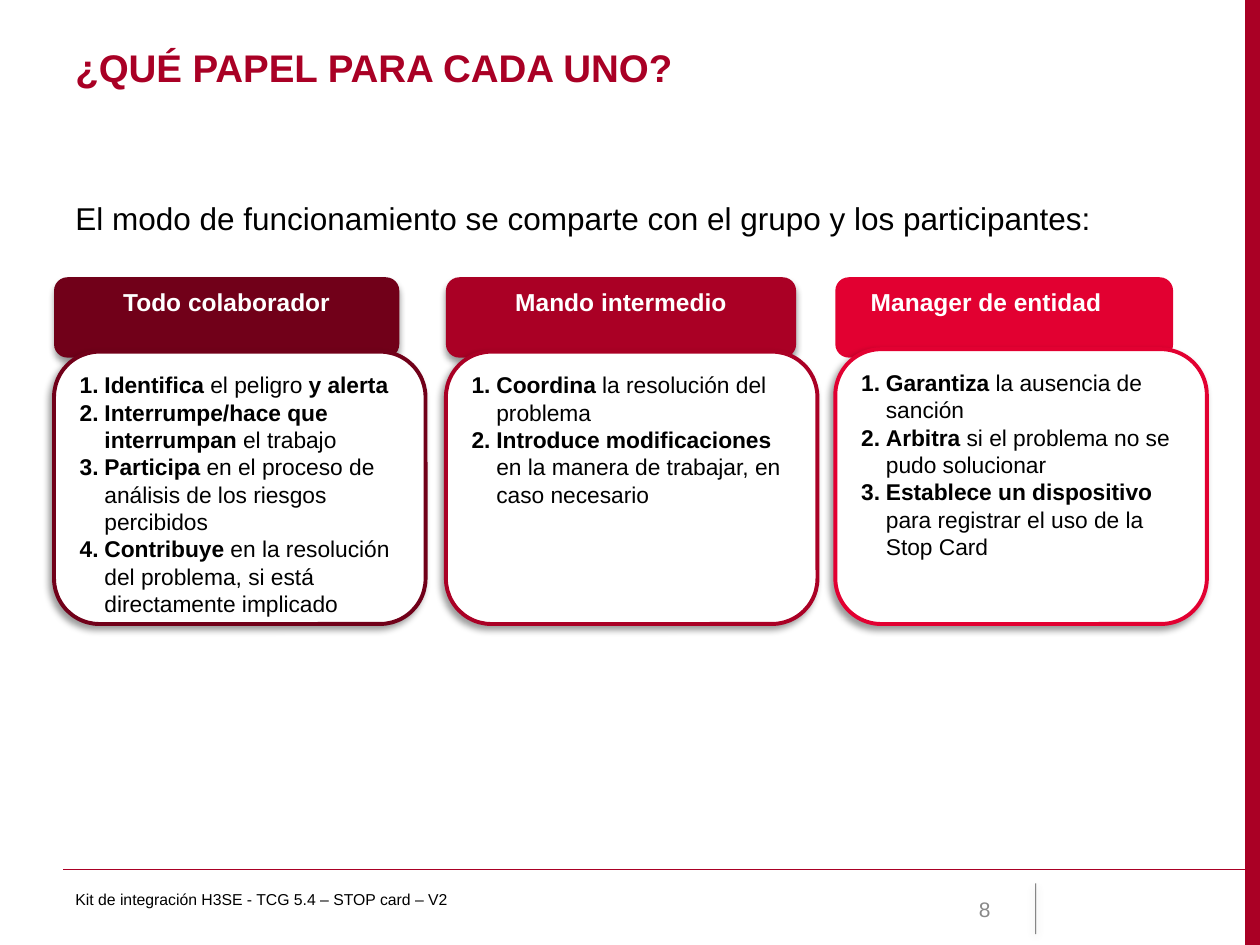
from lxml import etree
from pptx import Presentation
from pptx.dml.color import RGBColor
from pptx.enum.shapes import MSO_CONNECTOR, MSO_SHAPE
from pptx.enum.text import MSO_ANCHOR, PP_ALIGN
from pptx.oxml.ns import qn
from pptx.util import Cm, Pt

STRAIGHT = MSO_CONNECTOR.STRAIGHT
RECTANGLE = MSO_SHAPE.RECTANGLE
ROUNDED = MSO_SHAPE.ROUNDED_RECTANGLE
ALTERNATE = MSO_SHAPE.FLOWCHART_ALTERNATE_PROCESS
TOP, MIDDLE = MSO_ANCHOR.TOP, MSO_ANCHOR.MIDDLE
LEFT, CENTER, RIGHT = PP_ALIGN.LEFT, PP_ALIGN.CENTER, PP_ALIGN.RIGHT

BLACK = RGBColor(0x00, 0x00, 0x00)
WHITE = RGBColor(0xFF, 0xFF, 0xFF)
GREY = RGBColor(0x89, 0x89, 0x89)
TITLE_RED = RGBColor(0xA9, 0x00, 0x25)
DARK_RED = RGBColor(0x71, 0x00, 0x19)
RED = RGBColor(0xAA, 0x00, 0x25)
BRIGHT_RED = RGBColor(0xE2, 0x00, 0x31)

HEADER_HEIGHT = 1.62
BODY_WIDTH = 7.49
COLUMN_TOP, COLUMN_BOTTOM = 5.59, 12.58

ROLES = [
    {"title": "Todo colaborador", "color": DARK_RED, "left": 1.09, "header_width": 6.96,
     "body_offset": 1.5, "header_shape": ALTERNATE, "header_shadow": True, "right_inset": 0.25,
     "duties": [
         [("Identifica ", True), ("el peligro ", False), ("y alerta", True)],
         [("Interrumpe/hace que interrumpan", True), (" el trabajo", False)],
         [("Participa", True), (" en el proceso de análisis de los riesgos percibidos", False)],
         [("Contribuye", True),
          (" en la resolución del problema, si está directamente implicado", False)]]},
    {"title": "Mando intermedio", "color": RED, "left": 8.99, "header_width": 7.06,
     "body_offset": 1.5, "header_shape": ROUNDED, "header_shadow": True, "right_inset": 0.25,
     "duties": [
         [("Coordina", True), (" la resolución del problema", False)],
         [("Introduce modificaciones ", True),
          ("en la manera de trabajar, en caso necesario", False)]]},
    {"title": "Manager de entidad", "color": BRIGHT_RED, "left": 16.84, "header_width": 6.81,
     "body_offset": 1.45, "header_shape": ROUNDED, "header_shadow": False, "right_inset": 0.98,
     "duties": [
         [("Garantiza", True), (" la ausencia de sanción", False)],
         [("Arbitra", True), (" si el problema no se pudo solucionar", False)],
         [("Establece un dispositivo", True),
          (" para registrar el uso de la Stop Card", False)]]},
]


def set_values(target, values):
    """Set each named attribute of the target."""
    for name, value in values.items():
        setattr(target, name, value)


def add_span(para, text, size, color, bold=False):
    """Add one formatted run to a paragraph."""
    span = para.add_run()
    span.text = text
    set_values(span.font, {"name": "Arial", "size": Pt(size), "bold": bold})
    span.font.color.rgb = color


def add_shadow(effects, alpha, blur, distance, angle):
    """Put a black outer shadow in an effect list."""
    shadow = etree.SubElement(effects, qn("a:outerShdw"), {
        "blurRad": str(Pt(blur)), "dist": str(Pt(distance)),
        "dir": str(angle * 60000), "rotWithShape": "0"})
    color = etree.SubElement(shadow, qn("a:srgbClr"), val="000000")
    etree.SubElement(color, qn("a:alpha"), val=str(alpha * 1000))


def add_panel(page, kind, box, fill, line=None, shadow_angle=None):
    """Add a filled shape with an optional outline and shadow."""
    panel = page.shapes.add_shape(kind, *map(Cm, box))
    panel.fill.solid()
    panel.fill.fore_color.rgb = fill
    if line is None:
        panel.line.fill.background()
    else:
        panel.line.color.rgb = line
        panel.line.width = Pt(2.25)
    panel.shadow.inherit = False
    if shadow_angle is not None:
        effects = panel.element.spPr.find(qn("a:effectLst"))
        add_shadow(effects, 40, 4, 3, shadow_angle)
    set_values(panel.text_frame, {"word_wrap": True, "vertical_anchor": TOP})
    return panel


def add_rule(page, ends, color, width):
    """Add a straight line and return its empty effect list."""
    rule = page.shapes.add_connector(STRAIGHT, *map(Cm, ends))
    rule.line.color.rgb = color
    rule.line.width = Pt(width)
    return etree.SubElement(rule.element.spPr, qn("a:effectLst"))


def add_label(page, box, text, size, color, bold=False, align=LEFT, anchor=TOP):
    """Add a text box holding one line."""
    label = page.shapes.add_textbox(*map(Cm, box))
    set_values(label.text_frame, {"word_wrap": True, "vertical_anchor": anchor})
    para = label.text_frame.paragraphs[0]
    para.alignment = align
    add_span(para, text, size, color, bold)


def add_number(para):
    """Number a paragraph with a hanging indent."""
    properties = para._p.get_or_add_pPr()
    set_indent = {"marL": str(Cm(0.5)), "indent": str(Cm(-0.5))}
    for name, value in set_indent.items():
        properties.set(name, value)
    etree.SubElement(properties, qn("a:buFont"), typeface="Arial")
    etree.SubElement(properties, qn("a:buAutoNum"), type="arabicPeriod")


def add_role(page, left, top, bottom, role):
    """Build one role column: coloured header and outlined list of duties."""
    header = add_panel(page, role["header_shape"],
                       (left, top, role["header_width"], HEADER_HEIGHT), role["color"],
                       shadow_angle=90 if role["header_shadow"] else None)
    header.text_frame.margin_right = Cm(role["right_inset"])
    heading = header.text_frame.paragraphs[0]
    heading.alignment = CENTER
    add_span(heading, role["title"], 14, WHITE, True)

    body_top = top + role["body_offset"]
    body = add_panel(page, ROUNDED, (left, body_top, BODY_WIDTH, bottom - body_top),
                     WHITE, role["color"], 135)
    frame = body.text_frame
    for index, duty in enumerate(role["duties"]):
        para = frame.add_paragraph() if index else frame.paragraphs[0]
        para.alignment = LEFT
        add_number(para)
        for text, bold in duty:
            add_span(para, text, 13, BLACK, bold)


def add_frame(page, width, height):
    """Draw the side band, footer rule, footer text and page number."""
    band = 0.3
    footer_top, footer_height = 17.81, 1.02
    add_panel(page, RECTANGLE, (width - band, 0, band, height), RED)
    add_rule(page, (1.27, 17.53, width, 17.53), RED, 0.75)
    effects = add_rule(page, (20.88, footer_top, 20.88, footer_top + footer_height), BLACK, 0.5)
    add_shadow(effects, 38, 5, 1.6, 90)
    color = effects.getparent().find(".//" + qn("a:srgbClr"))
    etree.SubElement(color, qn("a:alpha"), val="70000")
    add_label(page, (18.21, footer_top, 2.01, footer_height), "8", 12, GREY,
              align=RIGHT, anchor=MIDDLE)
    add_label(page, (1.27, footer_top, 15.44, footer_height),
              "Kit de integración H3SE - TCG 5.4 – STOP card – V2", 9, BLACK)


def main():
    """Build the slide and save it."""
    width, height = 25.4, 19.05
    deck = Presentation()
    set_values(deck, {"slide_width": Cm(width), "slide_height": Cm(height)})
    page = deck.slides.add_slide(deck.slide_layouts[6])
    add_frame(page, width, height)
    add_label(page, (1.27, 0.76, 22.83, 1.75), "¿QUÉ PAPEL PARA CADA UNO?", 22, TITLE_RED, True)
    add_label(page, (1.27, 3.89, 23.09, 1.02),
              "El modo de funcionamiento se comparte con el grupo y los participantes:", 18, BLACK)
    for role in ROLES:
        add_role(page, role["left"], COLUMN_TOP, COLUMN_BOTTOM, role)
    deck.save("out.pptx")


if __name__ == "__main__":
    main()
